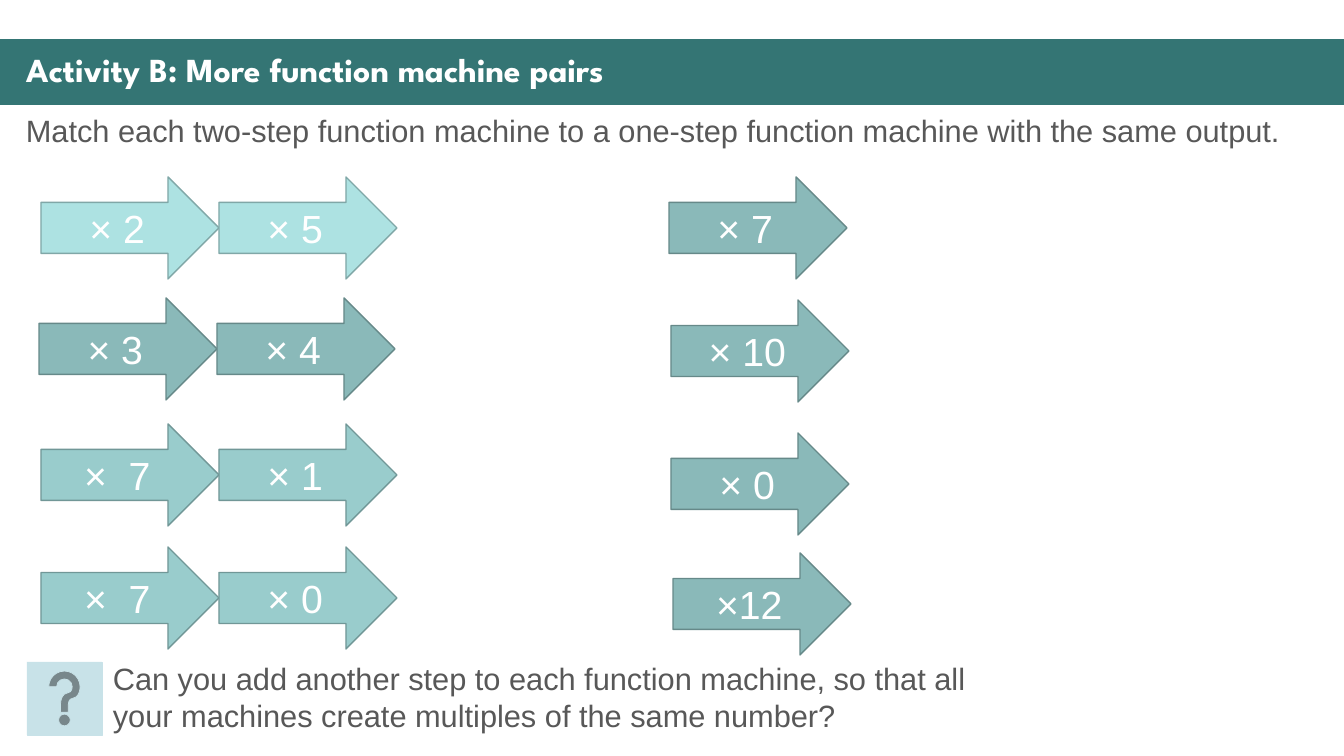
from lxml.etree import SubElement
from pptx import Presentation
from pptx.dml.color import RGBColor
from pptx.enum.shapes import MSO_SHAPE as Shape
from pptx.enum.text import MSO_ANCHOR as Anchor, MSO_AUTO_SIZE as AutoSize, PP_ALIGN as Align
from pptx.oxml.ns import qn
from pptx.util import Pt

WHITE = RGBColor(0xFF, 0xFF, 0xFF)
TEAL = RGBColor(0x34, 0x75, 0x74)
GREY = RGBColor(0x58, 0x58, 0x58)
ICE = RGBColor(0xC8, 0xE2, 0xE8)
LIGHT = (RGBColor(0xAD, 0xE2, 0xE2), RGBColor(0x80, 0xA7, 0xA7))
MEDIUM = (RGBColor(0x99, 0xCC, 0xCC), RGBColor(0x71, 0x97, 0x97))
DARK = (RGBColor(0x8A, 0xB9, 0xB9), RGBColor(0x66, 0x89, 0x89))

TITLE = "Activity B: More function machine pairs"
TEXTS = [
    ("Match each two-step function machine to a one-step function machine with the same output.",
     (16, 107, 1287, 47)),
    ("Can you add another step to each function machine, so that all your machines "
     "create multiples of the same number?", (103, 655, 913, 85)),
]
MACHINES = [
    (41, 177, ["× 2", "× 5"], LIGHT),
    (39, 298, ["× 3", "× 4"], DARK),
    (41, 424, ["×  7", "× 1"], MEDIUM),
    (41, 547, ["×  7", "× 0"], MEDIUM),
    (669, 177, ["× 7"], DARK),
    (671, 300, ["× 10"], DARK),
    (671, 433, ["× 0"], DARK),
    (673, 553, ["×12"], DARK),
]
ARROW_WIDTH, ARROW_HEIGHT = 178, 102
PX = 914400 / 100.8


def emu(*lengths):
    return [round(length * PX) for length in lengths]


def write(shape, text, size, color, font="Arial", bold=False):
    shape.text_frame.text = text
    shape.text_frame.word_wrap = True
    para = shape.text_frame.paragraphs[0]
    span = para.runs[0].font
    span.size, span.name, span.bold = Pt(size), font, bold
    span.color.rgb = color
    return para


def space_before_fifth(para):
    spacing = SubElement(para._p.get_or_add_pPr(), qn("a:spcBef"))
    SubElement(spacing, qn("a:spcPct")).set("val", "20000")


def add_filled(page, kind, place, fill, line=None, width=1):
    shape = page.shapes.add_shape(kind, *emu(*place))
    shape.shadow.inherit = False
    shape.fill.solid()
    shape.fill.fore_color.rgb = fill
    if line is None:
        shape.line.fill.background()
    else:
        shape.line.color.rgb = line
        shape.line.width = Pt(width)
    return shape


def add_heading(page):
    title = page.shapes.title
    band = add_filled(page, Shape.RECTANGLE, (0, 39, 1344, 66), TEAL)
    title.element.addprevious(band.element)
    title.left, title.top, title.width, title.height = emu(16, 48, 1314, 47)
    para = write(title, TITLE, 24, WHITE, "League Spartan", True)
    title.text_frame.auto_size = AutoSize.NONE
    title.text_frame.vertical_anchor = Anchor.TOP
    para.alignment = Align.LEFT
    para.line_spacing, para.space_before = 0.9, Pt(10)


def add_machine(page, left, top, steps, colors):
    for index, step in enumerate(steps):
        place = (left + index * ARROW_WIDTH, top, ARROW_WIDTH, ARROW_HEIGHT)
        arrow = add_filled(page, Shape.RIGHT_ARROW, place, *colors)
        para = write(arrow, step, 28, WHITE)
        arrow.text_frame.vertical_anchor = Anchor.MIDDLE
        para.alignment = Align.CENTER
        space_before_fifth(para)


def main():
    """Build the function machine matching activity."""
    deck = Presentation()
    deck.slide_width, deck.slide_height = emu(1344, 756)
    page = deck.slides.add_slide(deck.slide_layouts[5])
    add_heading(page)
    for text, place in TEXTS:
        box = page.shapes.add_textbox(*emu(*place))
        space_before_fifth(write(box, text, 22, GREY))
        box.text_frame.auto_size = AutoSize.SHAPE_TO_FIT_TEXT
    for machine in MACHINES:
        add_machine(page, *machine)
    add_filled(page, Shape.ACTION_BUTTON_HELP, (27, 662, 75, 73), ICE, ICE, 0.5)
    deck.save("out.pptx")


if __name__ == "__main__":
    main()
